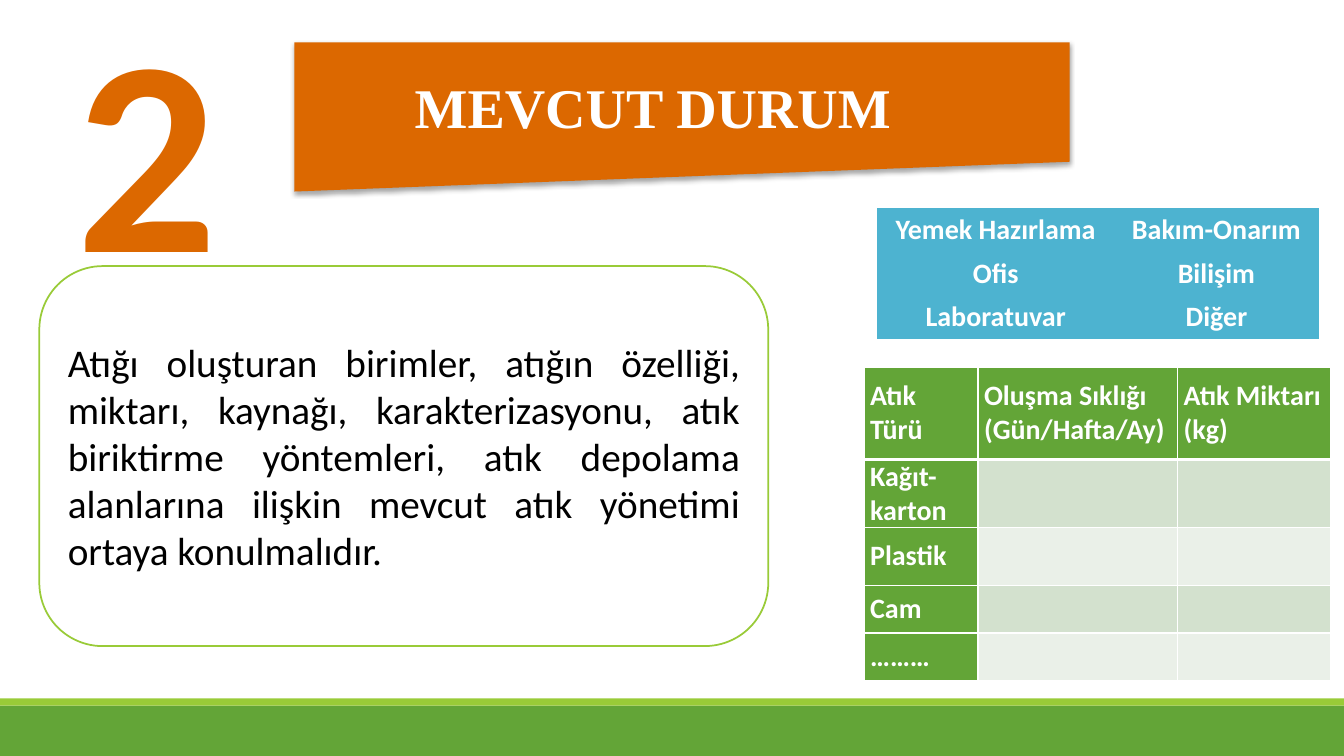
from dataclasses import dataclass
from typing import Any

from lxml import etree
from pptx import Presentation
from pptx.dml.color import RGBColor
from pptx.enum.shapes import MSO_SHAPE
from pptx.enum.text import MSO_ANCHOR, MSO_AUTO_SIZE, PP_ALIGN
from pptx.oxml import parse_xml
from pptx.oxml.ns import nsdecls, qn
from pptx.util import Emu, Pt

RECTANGLE = MSO_SHAPE.RECTANGLE
ROUNDED = MSO_SHAPE.ROUNDED_RECTANGLE
MANUAL_INPUT = MSO_SHAPE.FLOWCHART_MANUAL_INPUT
LEFT, CENTER, JUSTIFY = PP_ALIGN.LEFT, PP_ALIGN.CENTER, PP_ALIGN.JUSTIFY
TOP, MIDDLE = MSO_ANCHOR.TOP, MSO_ANCHOR.MIDDLE
FIT_TEXT = MSO_AUTO_SIZE.SHAPE_TO_FIT_TEXT

EMU_PER_PX = 9144  # 100 px to the inch
PLAIN_TABLE_STYLE = "{2D5ABB26-0587-4C30-8999-92F81FD0307C}"


@dataclass(frozen=True)
class Theme:
    white: str = "FFFFFF"
    black: str = "000000"
    green: str = "63A537"
    lime: str = "99CB38"
    orange: str = "DC6800"
    blue: str = "4DB3D0"
    band_dark: str = "D3E1CE"
    band_light: str = "EAF0E8"
    font: str = "Calibri"
    title_font: str = "Times New Roman"
    number_size: int = 199
    title_size: int = 40
    body_size: int = 28
    table_size: int = 20


THEME = Theme()


@dataclass(frozen=True)
class Box:
    left: int
    top: int
    width: int
    height: int

    def emu(self) -> list[Emu]:
        return [px(n) for n in (self.left, self.top, self.width, self.height)]


@dataclass(frozen=True)
class Style:
    size: int
    color: str
    bold: bool = True
    font: str = THEME.font
    align: Any = CENTER


@dataclass(frozen=True)
class Panel:
    box: Box
    fill: str
    preset: Any = RECTANGLE
    line: str | None = None
    rotation: int = 0


@dataclass(frozen=True)
class Grid:
    """A table: its place, track sizes, texts and cell formats."""
    left: int
    top: int
    columns: list[int]
    rows: list[int]
    texts: list[list[str]]
    fills: list[list[str]]
    style: Style
    cell_format: dict[str, Any]
    border: str | None = None


def px(length: int) -> Emu:
    return Emu(length * EMU_PER_PX)


def rgb(color: str) -> RGBColor:
    return RGBColor.from_string(color)


def apply(target: Any, values: dict[str, Any]) -> None:
    for name, value in values.items():
        setattr(target, name, value)


def write(frame: Any, text: str, style: Style) -> Any:
    paragraph = frame.paragraphs[0]
    paragraph.alignment = style.align
    run = paragraph.add_run()
    run.text = text
    apply(run.font, {"size": Pt(style.size), "bold": style.bold, "name": style.font})
    run.font.color.rgb = rgb(style.color)
    return run


def draw_panel(shapes: Any, panel: Panel) -> Any:
    shape = shapes.add_shape(panel.preset, *panel.box.emu())
    shape.shadow.inherit = False
    shape.rotation = panel.rotation
    shape.fill.solid()
    shape.fill.fore_color.rgb = rgb(panel.fill)
    if panel.line:
        shape.line.color.rgb = rgb(panel.line)
        shape.line.width = Pt(1.25)
    else:
        shape.line.fill.background()
    return shape


def cast_shadow(shape: Any) -> None:
    effects = shape._element.spPr.find(qn("a:effectLst"))
    effects.append(parse_xml(
        f'<a:outerShdw {nsdecls("a")} blurRad="{Pt(3.1)}" dist="{Pt(1.8)}" '
        f'dir="5400000" rotWithShape="0"><a:srgbClr val="{THEME.black}">'
        '<a:alpha val="35000"/></a:srgbClr></a:outerShdw>'))


def outline_text(run: Any, color: str) -> None:
    line = parse_xml(
        f'<a:ln {nsdecls("a")} w="{Pt(0.75)}"><a:solidFill>'
        f'<a:srgbClr val="{color}"/></a:solidFill></a:ln>')
    run.font._element.insert(0, line)


def set_borders(cell: Any, color: str | None, bottom_width: int) -> None:
    """Draw the four sides; the lines go ahead of the cell's fill."""
    properties = cell._tc.get_or_add_tcPr()
    for position, side in enumerate(("lnL", "lnR", "lnT", "lnB")):
        line = etree.Element(qn(f"a:{side}"))
        if color:
            line.set("w", str(Pt(bottom_width if side == "lnB" else 1)))
            fill = etree.SubElement(line, qn("a:solidFill"))
            etree.SubElement(fill, qn("a:srgbClr")).set("val", color)
        else:
            etree.SubElement(line, qn("a:noFill"))
        properties.insert(position, line)


def draw_grid(shapes: Any, grid: Grid) -> None:
    box = Box(grid.left, grid.top, sum(grid.columns), sum(grid.rows))
    table = shapes.add_table(len(grid.rows), len(grid.columns), *box.emu()).table
    apply(table, {"first_row": False, "horz_banding": False})
    table._tbl.tblPr.find(qn("a:tableStyleId")).text = PLAIN_TABLE_STYLE
    for column, width in zip(table.columns, grid.columns):
        column.width = px(width)
    for r, height in enumerate(grid.rows):
        table.rows[r].height = px(height)
        for c, fill in enumerate(grid.fills[r]):
            cell = table.cell(r, c)
            cell.fill.solid()
            cell.fill.fore_color.rgb = rgb(fill)
            set_borders(cell, grid.border, bottom_width=3 if r == 0 else 1)
            if c < len(grid.texts[r]):
                apply(cell, grid.cell_format)
                write(cell.text_frame, grid.texts[r][c], grid.style)


def draw_banner(shapes: Any) -> None:
    banner = shapes.add_group_shape().shapes
    ribbon = Panel(Box(292, 42, 769, 148), THEME.orange, MANUAL_INPUT, rotation=180)
    cast_shadow(draw_panel(banner, ribbon))
    title = draw_panel(banner, Panel(Box(321, 50, 653, 99), THEME.orange, MANUAL_INPUT))
    margins = ("margin_left", "margin_top", "margin_right", "margin_bottom")
    apply(title.text_frame, {"word_wrap": True, "vertical_anchor": MIDDLE,
                             **dict.fromkeys(margins, px(22))})
    write(title.text_frame, "MEVCUT DURUM",
          Style(THEME.title_size, THEME.white, font=THEME.title_font))
    title.text_frame.paragraphs[0].line_spacing = 0.9


def draw_number(shapes: Any) -> None:
    number = shapes.add_textbox(*Box(65, -31, 162, 345).emu())
    apply(number.text_frame, {"word_wrap": False, "auto_size": FIT_TEXT})
    run = write(number.text_frame, "2", Style(THEME.number_size, THEME.orange))
    outline_text(run, THEME.white)


def draw_description(shapes: Any) -> None:
    card = draw_panel(shapes, Panel(Box(39, 264, 723, 377), THEME.white, ROUNDED, THEME.lime))
    apply(card.text_frame, {"word_wrap": True, "vertical_anchor": MIDDLE})
    write(card.text_frame,
          "Atığı oluşturan birimler, atığın özelliği, miktarı, kaynağı, "
          "karakterizasyonu, atık biriktirme yöntemleri, atık depolama alanlarına "
          "ilişkin mevcut atık yönetimi ortaya konulmalıdır.",
          Style(THEME.body_size, THEME.black, bold=False, align=JUSTIFY))


def main() -> None:
    presentation = Presentation()
    apply(presentation, {"slide_width": px(1333), "slide_height": px(750)})
    shapes = presentation.slides.add_slide(presentation.slide_layouts[6]).shapes

    for stripe in (Panel(Box(0, 700, 1333, 50), THEME.green),
                   Panel(Box(0, 693, 1333, 7), THEME.lime)):
        draw_panel(shapes, stripe)
    draw_banner(shapes)
    draw_number(shapes)
    draw_description(shapes)

    bands = [THEME.band_dark, THEME.band_light] * 2
    wastes = ["Kağıt-karton", "Plastik", "Cam", "………"]
    headings = ["Atık Türü", "Oluşma Sıklığı (Gün/Hafta/Ay)", "Atık Miktarı (kg)"]
    draw_grid(shapes, Grid(
        857, 364, [113, 198, 152], [92, 67, 58, 47, 47],
        texts=[headings] + [[waste] for waste in wastes],
        fills=[[THEME.green] * 3] + [[THEME.green, band, band] for band in bands],
        style=Style(THEME.table_size, THEME.white, align=LEFT),
        cell_format={"vertical_anchor": MIDDLE, "margin_left": px(6), "margin_right": px(6),
                     "margin_top": 0, "margin_bottom": 0},
        border=THEME.white))
    units = [["Yemek Hazırlama", "Bakım-Onarım"], ["Ofis", "Bilişim"], ["Laboratuvar", "Diğer"]]
    draw_grid(shapes, Grid(
        870, 206, [235, 203], [43] * 3, texts=units, fills=[[THEME.blue] * 2] * 3,
        style=Style(THEME.table_size, THEME.white), cell_format={"vertical_anchor": TOP}))

    presentation.save("out.pptx")


if __name__ == "__main__":
    main()
